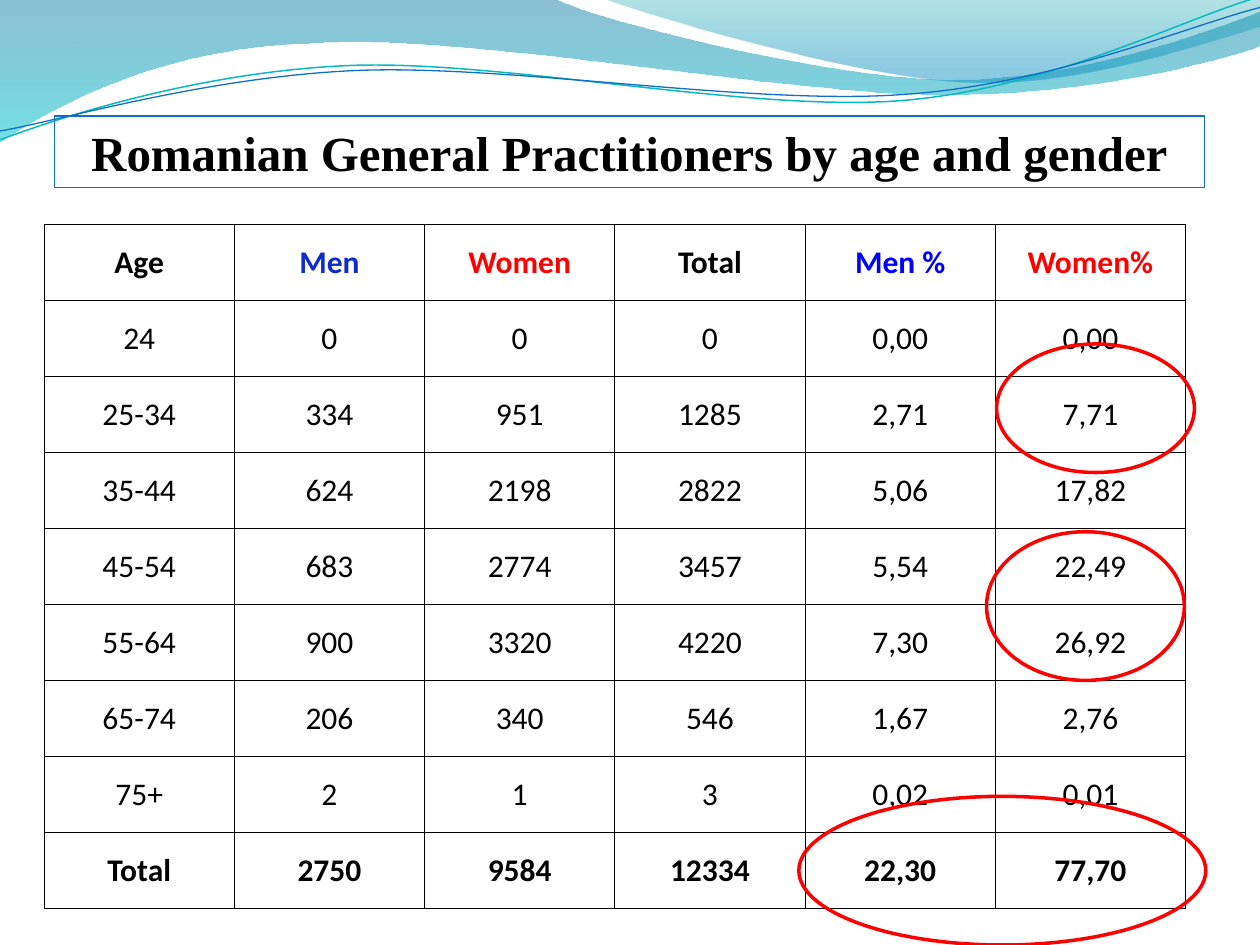
from math import cos, radians, sin

from lxml import etree
from pptx import Presentation
from pptx.dml.color import RGBColor
from pptx.enum.shapes import MSO_SHAPE
from pptx.enum.text import MSO_ANCHOR, MSO_AUTO_SIZE, PP_ALIGN
from pptx.oxml.ns import qn
from pptx.util import Inches, Pt

BLACK = RGBColor(0x00, 0x00, 0x00)
RED = RGBColor(0xFF, 0x00, 0x00)
MEN_BLUE = RGBColor(0x0D, 0x2C, 0xC9)
PERCENT_BLUE = RGBColor(0x00, 0x00, 0xFF)
THEME_BLUE = RGBColor(0x0F, 0x6F, 0xC6)
THEME_TEAL = RGBColor(0x0A, 0xB8, 0xBF)
DEEP_BLUE = RGBColor(0x00, 0x74, 0xA1)
CYAN = RGBColor(0x00, 0xC6, 0xCF)
DARK_TEAL = RGBColor(0x00, 0xA1, 0xA9)
SKY_BLUE = RGBColor(0x00, 0x8B, 0xBF)
TILT = 2.7

presentation = Presentation()
presentation.slide_width = Inches(10)
presentation.slide_height = Inches(7.5)
slide = presentation.slides.add_slide(presentation.slide_layouts[5])


def add_wave(start, segments, closed):
    """Draw a path of segments holding one point (straight) or three (cubic)."""
    points = [start] + [point for segment in segments for point in segment]
    corners = [(Inches(x), Inches(y)) for x, y in points]
    builder = slide.shapes.build_freeform(*corners[0], scale=1.0)
    builder.add_line_segments(corners[1:], close=closed)
    shape = builder.convert_to_shape()
    shape.shadow.inherit = False
    # Join each three straight steps of a cubic segment into one curve
    steps = iter(list(shape.element.spPr.iter(qn("a:lnTo"))))
    for segment in segments:
        lines = [next(steps) for _ in segment]
        if len(lines) == 3:
            curve = etree.Element(qn("a:cubicBezTo"))
            lines[0].addprevious(curve)
            for line in lines:
                curve.append(line[0])
                line.getparent().remove(line)
    return shape


# Filled header waves: start, segments, gradient stops (position, colour, opacity %)
filled_waves = [
    ((0, 0),
     [[(4.4, -0.01)],
      [(4.76, 0.17), (6.64, 0.63), (7.58, 0.63)],
      [(8.53, 0.63), (9.58, 0.26), (10, 0.09)],
      [(10.01, 0.36)],
      [(9.83, 0.44), (8.7, 0.76), (7.46, 0.75)],
      [(6.22, 0.75), (3.82, 0.28), (2.57, 0.34)],
      [(1.29, 0.36), (0.46, 0.83), (-0.01, 1.13)]],
     [(0, DEEP_BLUE, 45), (1, CYAN, 55)]),
    ((4.79, -0.01),
     [[(5.09, 0.11), (6.82, 0.62), (7.69, 0.65)],
      [(8.56, 0.69), (9.61, 0.32), (10, 0.21)],
      [(10, 0)]],
     [(0, DARK_TEAL, 30), (0.8, SKY_BLUE, 45)]),
]
for start, segments, stops in filled_waves:
    wave = add_wave(start, segments, True)
    wave.line.fill.background()
    wave.fill.gradient()
    wave.fill.gradient_angle = 270
    for stop, (position, color, _) in zip(wave.fill.gradient_stops, stops):
        stop.position = position
        stop.color.rgb = color
    for color_element, (_, _, opacity) in zip(wave.element.spPr.iter(qn("a:srgbClr")), stops):
        etree.SubElement(color_element, qn("a:alpha"), val=str(opacity * 1000))

# Thin header lines, levelled around their centre and then tilted
line_waves = [
    ([(0, 1.11), (0.48, 0.93), (1.58, 0.57), (2.77, 0.52), (3.95, 0.47), (5.93, 0.89),
      (7.13, 0.8), (8.33, 0.71), (9.38, 0.15), (9.98, -0.02)],
     (4.99, 0.58), THEME_TEAL, 0.85),
    ([(0, 1.04), (0.47, 0.96), (1.64, 0.61), (2.83, 0.56), (4.03, 0.51), (5.97, 0.84),
      (7.17, 0.75), (8.36, 0.67), (9.41, 0.21), (10, 0.06)],
     (5, 0.59), THEME_BLUE, 0.75),
]
cosine, sine = cos(radians(TILT)), sin(radians(TILT))
for points, (center_x, center_y), color, width in line_waves:
    level = [(center_x + (x - center_x) * cosine - (y - center_y) * sine,
              center_y + (x - center_x) * sine + (y - center_y) * cosine) for x, y in points]
    wave = add_wave(level[0], [level[i:i + 3] for i in (1, 4, 7)], False)
    wave.rotation = 360 - TILT
    wave.fill.background()
    wave.line.color.rgb = color
    wave.line.width = Pt(width)

# Title, brought in front of the waves
title = slide.shapes.title
title.left, title.top, title.width, title.height = map(Inches, (0.43, 0.92, 9.13, 0.57))
title.line.color.rgb = THEME_BLUE
title.line.width = Pt(0.75)
title.text_frame.text = "Romanian General Practitioners by age and gender"
title.text_frame.word_wrap = True
title.text_frame.auto_size = MSO_AUTO_SIZE.NONE
title.text_frame.vertical_anchor = MSO_ANCHOR.MIDDLE
paragraph = title.text_frame.paragraphs[0]
paragraph.alignment = PP_ALIGN.CENTER
paragraph.font.name = "Times New Roman"
paragraph.font.size = Pt(28)
paragraph.font.bold = True
paragraph.font.color.rgb = BLACK
slide.shapes.element.append(title.element)

# Table of practitioners
rows = [
    ("Age", "Men", "Women", "Total", "Men %", "Women%"),
    ("24", "0", "0", "0", "0,00", "0,00"),
    ("25-34", "334", "951", "1285", "2,71", "7,71"),
    ("35-44", "624", "2198", "2822", "5,06", "17,82"),
    ("45-54", "683", "2774", "3457", "5,54", "22,49"),
    ("55-64", "900", "3320", "4220", "7,30", "26,92"),
    ("65-74", "206", "340", "546", "1,67", "2,76"),
    ("75+", "2", "1", "3", "0,02", "0,01"),
    ("Total", "2750", "9584", "12334", "22,30", "77,70"),
]
header_colors = [BLACK, MEN_BLUE, RED, BLACK, PERCENT_BLUE, RED]
table = slide.shapes.add_table(len(rows), len(header_colors), Inches(0.35), Inches(1.78),
                               Inches(9.06), Inches(5.43)).table
table.first_row = False
table.horz_banding = False
for row_index, row in enumerate(rows):
    for column_index, text in enumerate(row):
        cell = table.cell(row_index, column_index)
        cell.text = text
        cell.vertical_anchor = MSO_ANCHOR.MIDDLE
        cell.margin_left = cell.margin_right = cell.margin_top = cell.margin_bottom = 0
        paragraph = cell.text_frame.paragraphs[0]
        paragraph.alignment = PP_ALIGN.CENTER
        paragraph.font.name = "Calibri"
        paragraph.font.size = Pt(18)
        paragraph.font.bold = row_index in (0, len(rows) - 1)
        paragraph.font.color.rgb = header_colors[column_index] if row_index == 0 else BLACK
        # Borders come before the fill in the cell properties
        properties = cell._tc.get_or_add_tcPr()
        for side in ("a:lnL", "a:lnR", "a:lnT", "a:lnB"):
            border = etree.SubElement(properties, qn(side), w=str(Pt(0.5)))
            solid = etree.SubElement(border, qn("a:solidFill"))
            etree.SubElement(solid, qn("a:srgbClr"), val=str(BLACK))
        cell.fill.background()

# Ellipses around the key shares
for bounds in [(7.91, 2.73, 1.57, 1.02), (7.83, 4.22, 1.57, 1.18), (6.34, 6.32, 3.23, 1.18)]:
    ellipse = slide.shapes.add_shape(MSO_SHAPE.OVAL, *map(Inches, bounds))
    ellipse.shadow.inherit = False
    ellipse.fill.background()
    ellipse.line.color.rgb = RED
    ellipse.line.width = Pt(2)

presentation.save("out.pptx")
